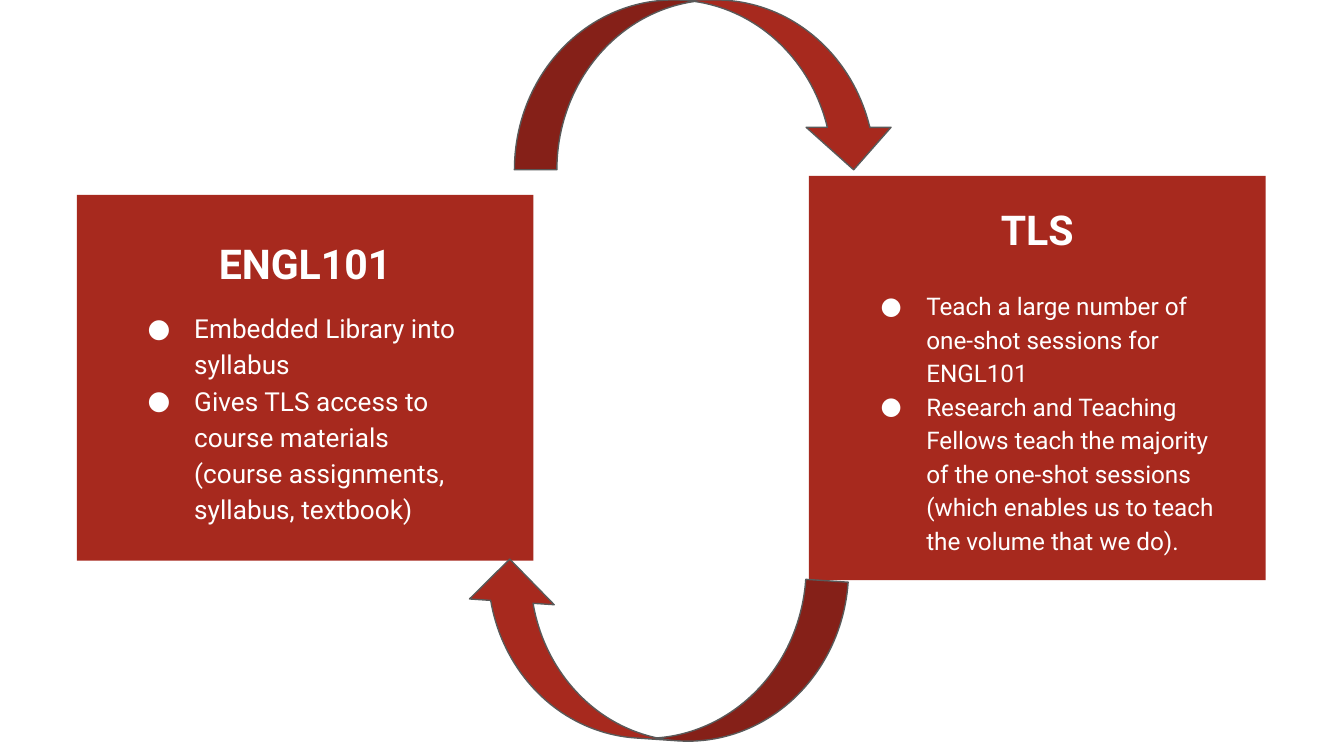
from pptx import Presentation
from pptx.dml.color import RGBColor
from pptx.enum.shapes import MSO_SHAPE as Shape
from pptx.enum.text import MSO_ANCHOR as Anchor, PP_ALIGN as Align
from pptx.oxml.ns import qn
from pptx.util import Pt
from lxml.etree import SubElement as Sub

RED = RGBColor(0xA7, 0x29, 0x1E)
GREY = RGBColor(0x59, 0x59, 0x59)
WHITE = RGBColor(0xFF, 0xFF, 0xFF)
FONT = "Roboto"


def add_run(para, text, size, bold=False):
    run = para.add_run()
    run.text = text
    font = run.font
    font.name, font.size, font.bold = FONT, Pt(size), bold
    font.color.rgb = WHITE


def set_bullet(para, hang):
    props = para._p.get_or_add_pPr()
    props.set("marL", str(Pt(36)))
    props.set("indent", str(-Pt(hang)))
    color = Sub(props, qn("a:buClr"))
    Sub(color, qn("a:srgbClr"), val=str(WHITE))
    Sub(props, qn("a:buFont"), typeface=FONT)
    Sub(props, qn("a:buChar"), char="●")


def add_card(slide, box, pad, head, items, size, gap, hang, lead):
    """Red card; pad is the text inset, gap the space below the heading."""
    left, top, width, height = box
    side, above, below = pad
    card = slide.shapes.add_shape(Shape.RECTANGLE, *map(Pt, box))
    card.shadow.inherit = False
    card.fill.solid()
    card.fill.fore_color.rgb = RED
    card.line.fill.background()

    area = (left + side, top + above,
            width - 2 * side, height - above - below)
    frame = slide.shapes.add_textbox(*map(Pt, area)).text_frame
    frame.word_wrap = True
    frame.vertical_anchor = Anchor.TOP
    frame.margin_left = frame.margin_right = Pt(7.2)
    frame.margin_top = frame.margin_bottom = Pt(7.2)

    title = frame.paragraphs[0]
    title.alignment = Align.CENTER
    title.line_spacing = lead
    title.space_after = Pt(gap)
    add_run(title, head, 22, True)
    for item in items:
        para = frame.add_paragraph()
        para.line_spacing = 1.15
        set_bullet(para, hang)
        add_run(para, item, size)


def add_arrow(slide, box, turn=0):
    arrow = slide.shapes.add_shape(Shape.CURVED_DOWN_ARROW, *map(Pt, box))
    arrow.shadow.inherit = False
    arrow.rotation = turn
    arrow.fill.solid()
    arrow.fill.fore_color.rgb = RED
    arrow.line.color.rgb = GREY
    arrow.line.width = Pt(0.75)


def main():
    deck = Presentation()
    deck.slide_width, deck.slide_height = Pt(720), Pt(405)
    slide = deck.slides.add_slide(deck.slide_layouts[6])

    add_card(slide, (41.2, 104.4, 244.6, 196), (19.8, 12.2, 20.4), "ENGL101",
             ["Embedded Library into syllabus",
              "Gives TLS access to course materials "
              "(course assignments, syllabus, textbook)"],
             size=14, gap=11, hang=25, lead=1.15)
    add_card(slide, (433.4, 94.2, 244.6, 216.6), (19.8, 8, 2.7), "TLS",
             ["Teach a large number of one-shot sessions for ENGL101",
              "Research and Teaching Fellows teach the majority of the one-shot "
              "sessions (which enables us to teach the volume that we do)."],
             size=13, gap=18, hang=24.5, lead=1)

    add_arrow(slide, (275.6, 0, 204.5, 91))
    add_arrow(slide, (247, 304.8, 204.5, 91), 183.9)
    deck.save("out.pptx")


if __name__ == "__main__":
    main()
